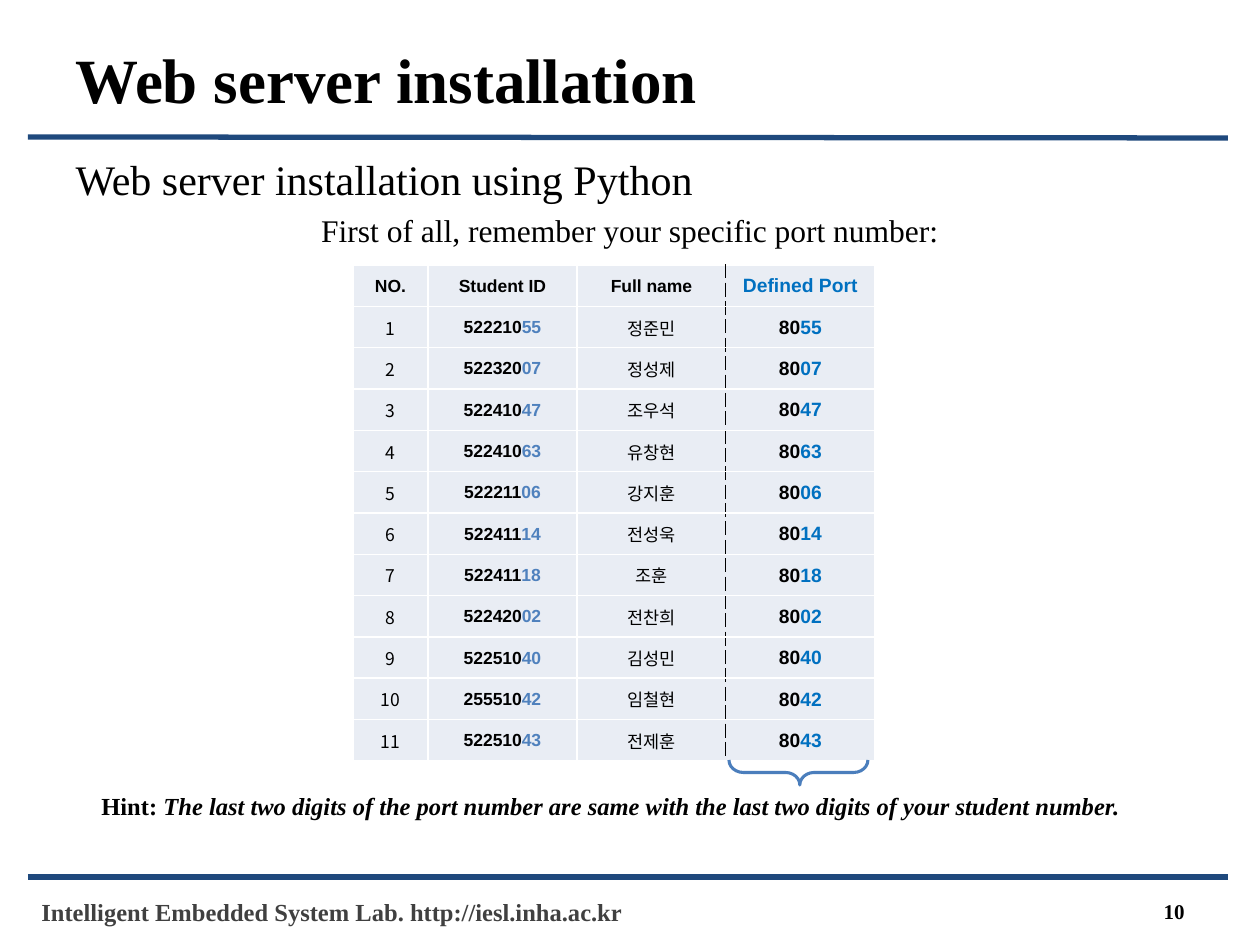
from dataclasses import dataclass

from lxml import etree
from pptx import Presentation
from pptx.dml.color import RGBColor
from pptx.enum.shapes import MSO_CONNECTOR, MSO_SHAPE
from pptx.enum.text import MSO_ANCHOR, MSO_AUTO_SIZE, PP_ALIGN
from pptx.oxml.ns import qn
from pptx.util import Pt

STRAIGHT = MSO_CONNECTOR.STRAIGHT
RIGHT_BRACE = MSO_SHAPE.RIGHT_BRACE
MIDDLE, TOP = MSO_ANCHOR.MIDDLE, MSO_ANCHOR.TOP
LEFT, CENTER, RIGHT = PP_ALIGN.LEFT, PP_ALIGN.CENTER, PP_ALIGN.RIGHT
NO_FIT, GROW = MSO_AUTO_SIZE.NONE, MSO_AUTO_SIZE.SHAPE_TO_FIT_TEXT
PX = 914400 / 126


@dataclass(frozen=True)
class Theme:
    serif: str = "Times New Roman"
    sans: str = "Arial"
    korean: str = "Noto Sans CJK KR"
    ink: str = "000000"
    footer: str = "404040"
    rule: str = "1F497D"
    cell: str = "E9EDF4"
    grid: str = "FFFFFF"
    id_accent: str = "4F81BD"
    port_accent: str = "0070C0"
    brace: str = "4B7EBC"
    title_size: int = 36
    topic_size: int = 24
    lead_size: int = 18
    note_size: int = 14
    page_size: int = 12
    port_size: int = 11
    cell_size: int = 10


THEME = Theme()


def box(*lengths):
    """Turn px lengths into EMU."""
    return [int(length * PX) for length in lengths]


def style(run, font, size, color=THEME.ink, bold=False, italic=False):
    run.font.name = font
    run.font.size = Pt(size)
    run.font.color.rgb = RGBColor.from_string(color)
    run.font.bold = bold
    run.font.italic = italic
    etree.SubElement(run.font._element, qn("a:ea"), typeface=THEME.korean)


prs = Presentation()
prs.slide_width, prs.slide_height = box(1260, 945)
slide = prs.slides.add_slide(prs.slide_layouts[1])
shapes = slide.shapes

# Rules above and below the content
for start_y, end_y in ((137, 138), (877, 877)):
    rule = shapes.add_connector(STRAIGHT, *box(28, start_y, 1228, end_y))
    rule.line.color.rgb = RGBColor.from_string(THEME.rule)
    rule.line.width = Pt(3)
    etree.SubElement(rule._element.spPr, qn("a:effectLst"))

# Title
title = shapes.title
title.left, title.top, title.width, title.height = box(63, 28, 1134, 100)
title.text_frame.text = "Web server installation"
title.text_frame.auto_size = NO_FIT
title.text_frame.vertical_anchor = MIDDLE
heading = title.text_frame.paragraphs[0]
heading.alignment = LEFT
style(heading.runs[0], THEME.serif, THEME.title_size, bold=True)

# Topic and lead-in
body = slide.placeholders[1]
body.left, body.top, body.width, body.height = box(63, 147, 1134, 116)
body.text_frame.text = ("Web server installation using Python\n"
                        "First of all, remember your specific port number:")
body.text_frame.auto_size = NO_FIT
body.text_frame.vertical_anchor = TOP
body_formats = ((LEFT, THEME.topic_size, 0), (CENTER, THEME.lead_size, 4))
for paragraph, (alignment, size, gap) in zip(body.text_frame.paragraphs, body_formats):
    properties = paragraph._p.get_or_add_pPr()
    properties.set("marL", "0")
    properties.set("indent", "0")
    etree.SubElement(properties, qn("a:buNone"))
    paragraph.alignment = alignment
    paragraph.space_before = Pt(gap)
    style(paragraph.runs[0], THEME.serif, size)

# Port table: each port is 80 plus the last two digits of the student ID
students = (
    ("52221055", "정준민"), ("52232007", "정성제"), ("52241047", "조우석"),
    ("52241063", "유창현"), ("52221106", "강지훈"), ("52241114", "전성욱"),
    ("52241118", "조훈"), ("52242002", "전찬희"), ("52251040", "김성민"),
    ("25551042", "임철현"), ("52251043", "전제훈"),
)
id_font = (THEME.sans, THEME.cell_size)
port_font = (THEME.sans, THEME.port_size)
port_rows = [[
    [("NO.", *id_font, THEME.ink, True)],
    [("Student ID", *id_font, THEME.ink, True)],
    [("Full name", *id_font, THEME.ink, True)],
    [("Defined Port", *port_font, THEME.port_accent, True)],
]]
for number, (student_id, name) in enumerate(students, start=1):
    ending = student_id[-2:]
    port_rows.append([
        [(str(number), THEME.korean, THEME.cell_size)],
        [(student_id[:-2], *id_font, THEME.ink, True),
         (ending, *id_font, THEME.id_accent, True)],
        [(name, *id_font)],
        [("80", *port_font, THEME.ink, True),
         (ending, *port_font, THEME.port_accent, True)],
    ])

ports = shapes.add_table(len(port_rows), 4, *box(353, 265, 522, 496)).table
ports.first_row = ports.horz_banding = False
for column, width in zip(ports.columns, box(75, 149, 149, 149)):
    column.width = width

for row_index, port_row in enumerate(port_rows):
    for column_index, pieces in enumerate(port_row):
        cell = ports.cell(row_index, column_index)
        cell.margin_left, cell.margin_top, cell.margin_right, cell.margin_bottom = box(1, 1, 1, 0)
        cell.vertical_anchor = MIDDLE
        paragraph = cell.text_frame.paragraphs[0]
        paragraph.alignment = CENTER
        for text, *look in pieces:
            run = paragraph.add_run()
            run.text = text
            style(run, *look)
        cell_properties = cell._tc.get_or_add_tcPr()
        for side in ("L", "R", "T", "B"):
            dashed = (column_index, side) in ((2, "R"), (3, "L"))
            width = Pt(0.5) if dashed else Pt(1)
            border = etree.SubElement(cell_properties, qn(f"a:ln{side}"), w=str(width))
            border_fill = etree.SubElement(border, qn("a:solidFill"))
            etree.SubElement(border_fill, qn("a:srgbClr"),
                             val=THEME.ink if dashed else THEME.grid)
            etree.SubElement(border, qn("a:prstDash"), val="lgDash" if dashed else "solid")
        cell.fill.solid()
        cell.fill.fore_color.rgb = RGBColor.from_string(THEME.cell)

# Brace under the port column
brace = shapes.add_shape(RIGHT_BRACE, *box(786, 703, 25, 139))
brace.rotation = 270
brace._element.spPr.xfrm.set("flipH", "1")
brace.adjustments[0] = 0.57
brace.adjustments[1] = 0.51
brace.shadow.inherit = False
brace.fill.background()
brace.line.color.rgb = RGBColor.from_string(THEME.brace)
brace.line.width = Pt(1.75)

# Hint, footer and page number
notes = (
    ((89, 785, 1081, 43), LEFT, TOP, False, GROW, (
        ("Hint:", THEME.note_size, THEME.ink, False),
        (" The last two digits of the port number are same with the last two digits"
         " of your student number.", THEME.note_size, THEME.ink, True))),
    ((29, 891, 630, 43), LEFT, TOP, True, GROW, (
        ("Intelligent Embedded System Lab. http://iesl.inha.ac.kr",
         THEME.note_size, THEME.footer, False),)),
    ((903, 891, 294, 40), RIGHT, MIDDLE, True, NO_FIT, (
        ("10", THEME.page_size, THEME.ink, False),)),
)
for place, alignment, anchor, wrap, fit, pieces in notes:
    frame = shapes.add_textbox(*box(*place)).text_frame
    frame.word_wrap = wrap
    frame.auto_size = fit
    frame.vertical_anchor = anchor
    paragraph = frame.paragraphs[0]
    paragraph.alignment = alignment
    for text, size, color, italic in pieces:
        run = paragraph.add_run()
        run.text = text
        style(run, THEME.serif, size, color, True, italic)

prs.save("out.pptx")
